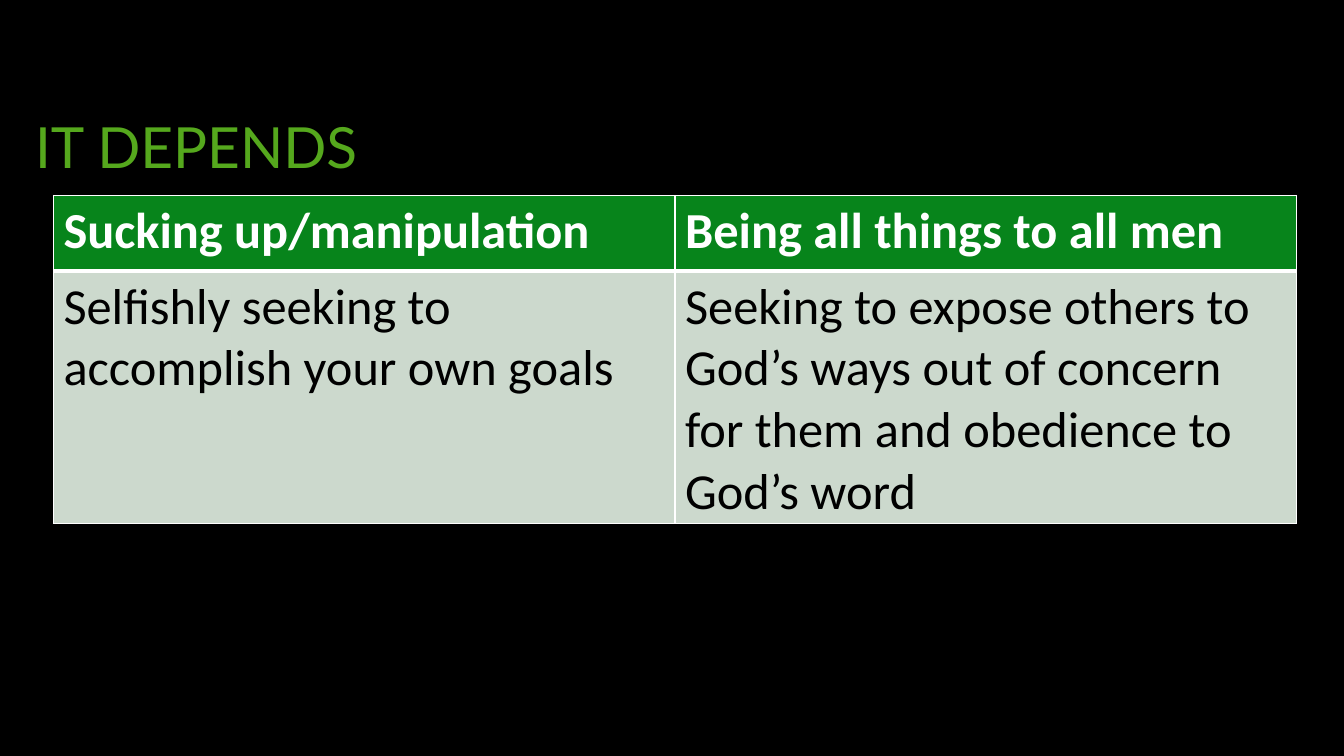
import pptx
import pptx.dml.color
import pptx.enum.text
import pptx.oxml.ns
import pptx.util
from lxml import etree

TITLE = "IT DEPENDS"
COMPARISON = [
    ("Sucking up/manipulation", "Being all things to all men"),
    (
        "Selfishly seeking to accomplish your own goals",
        "Seeking to expose others to God’s ways out of concern for them "
        "and obedience to God’s word",
    ),
]
# fill, text colour, bold, row height in inches
ROW_STYLES = [("07841B", "FFFFFF", True, 0.75), ("CCD9CD", "000000", False, 2.5)]
SLIDE_WIDTH, SLIDE_HEIGHT = 13.33, 7.5
TABLE_LEFT, TABLE_TOP, TABLE_WIDTH = 0.53, 1.94, 12.33
THIN, THICK = 1, 3

inches = pptx.util.Inches


def color(hex_string):
    return pptx.dml.color.RGBColor.from_string(hex_string)


def style_run(run, font_name, size, hex_string, bold=False):
    run.font.name = font_name
    run.font.size = pptx.util.Pt(size)
    run.font.bold = bold
    run.font.color.rgb = color(hex_string)


def add_borders(cell, widths):
    """Draw white cell edges; widths are points for left, right, top, bottom."""
    qn = pptx.oxml.ns.qn
    properties = cell._tc.get_or_add_tcPr()
    for position, (side, width) in enumerate(zip("LRTB", widths)):
        edge = etree.Element(qn(f"a:ln{side}"), w=str(pptx.util.Pt(width)))
        fill = etree.SubElement(edge, qn("a:solidFill"))
        etree.SubElement(fill, qn("a:srgbClr"), val="FFFFFF")
        properties.insert(position, edge)


def add_title(slide):
    box = slide.shapes.add_textbox(inches(0.25), inches(0.68), inches(12.9), inches(1.62))
    frame = box.text_frame
    frame.word_wrap = True
    frame.vertical_anchor = pptx.enum.text.MSO_ANCHOR.MIDDLE
    frame.text = TITLE
    heading = frame.paragraphs[0]
    heading.line_spacing = 0.9
    style_run(heading.runs[0], "Lato", 40.5, "55A81D")


def add_comparison(slide):
    row_count, column_count = len(COMPARISON), len(COMPARISON[0])
    table_height = sum(style[3] for style in ROW_STYLES)
    table = slide.shapes.add_table(
        row_count, column_count,
        inches(TABLE_LEFT), inches(TABLE_TOP), inches(TABLE_WIDTH), inches(table_height),
    ).table
    for column in table.columns:
        column.width = inches(TABLE_WIDTH / column_count)
    for r, (texts, style) in enumerate(zip(COMPARISON, ROW_STYLES)):
        fill, text_color, bold, height = style
        table.rows[r].height = inches(height)
        top, bottom = (THIN, THICK) if r == 0 else (THICK, THIN)
        for c, text in enumerate(texts):
            cell = table.cell(r, c)
            cell.text_frame.text = text
            style_run(cell.text_frame.paragraphs[0].runs[0], "Calibri", 36, text_color, bold)
            cell.fill.solid()
            cell.fill.fore_color.rgb = color(fill)
            add_borders(cell, (THIN, THIN, top, bottom))


def main():
    deck = pptx.Presentation()
    deck.slide_width, deck.slide_height = inches(SLIDE_WIDTH), inches(SLIDE_HEIGHT)
    slide = deck.slides.add_slide(deck.slide_layouts[6])
    slide.background.fill.solid()
    slide.background.fill.fore_color.rgb = color("000000")
    add_title(slide)
    add_comparison(slide)
    deck.save("out.pptx")


if __name__ == "__main__":
    main()
